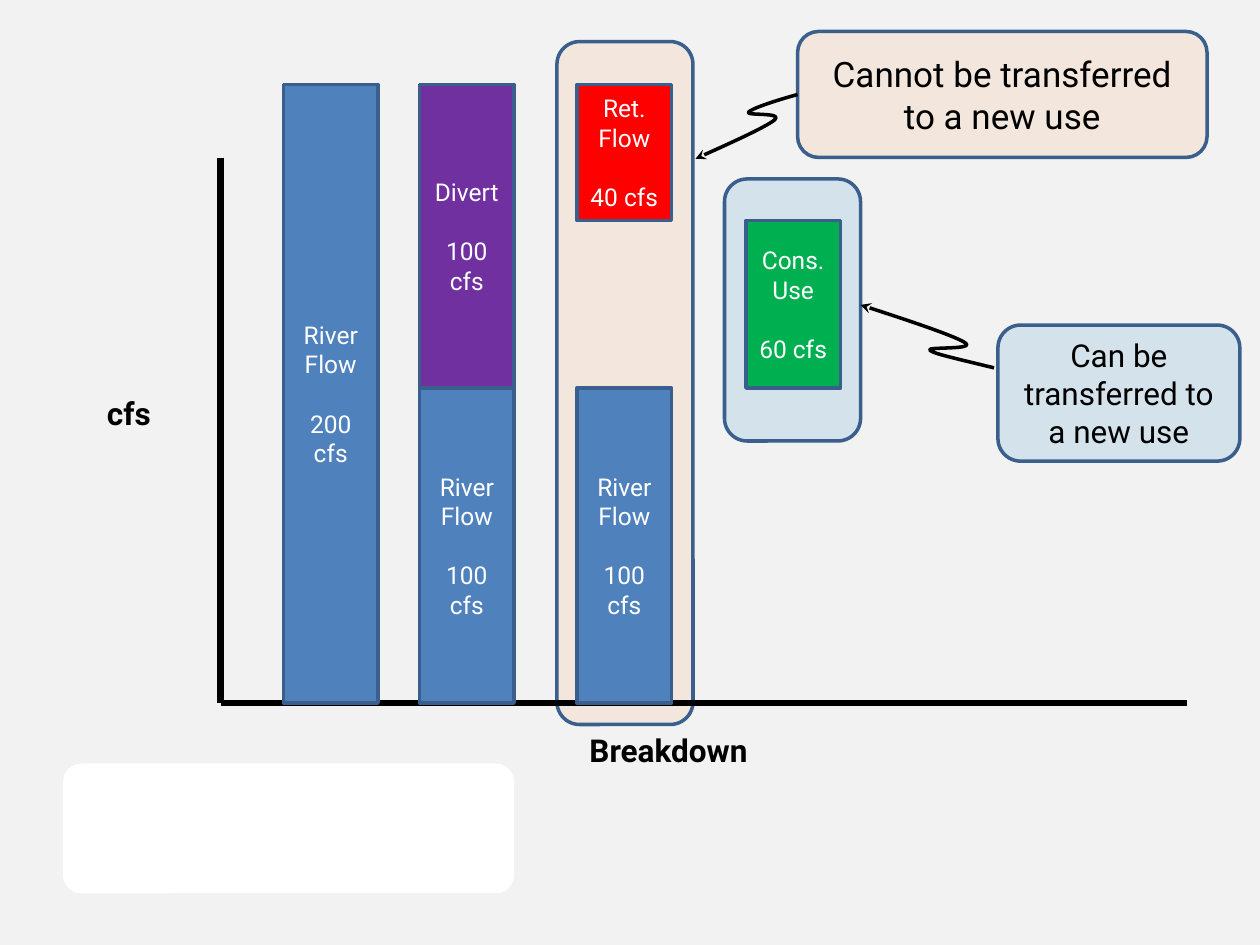
from dataclasses import dataclass

from lxml import etree
from pptx import Presentation
from pptx.dml.color import RGBColor
from pptx.enum.shapes import MSO_CONNECTOR, MSO_SHAPE
from pptx.enum.text import MSO_ANCHOR, PP_ALIGN
from pptx.oxml.ns import qn
from pptx.util import Inches, Pt

RECT = MSO_SHAPE.RECTANGLE
ROUNDED = MSO_SHAPE.ROUNDED_RECTANGLE
STRAIGHT = MSO_CONNECTOR.STRAIGHT
MIDDLE = MSO_ANCHOR.MIDDLE
TOP = MSO_ANCHOR.TOP
CENTER = PP_ALIGN.CENTER
LEFT = PP_ALIGN.LEFT


@dataclass(frozen=True)
class Theme:
    """Colours, type sizes and line widths of the slide."""
    font: str = "Roboto"
    background: str = "F2F2F2"
    panel: str = "FFFFFF"
    outline: str = "3A5F8C"
    ink: str = "000000"
    bar_text: str = "FFFFFF"
    river: str = "4F81BD"
    divert: str = "7030A0"
    consumed: str = "00B050"
    returned: str = "FF0000"
    fixed_tint: str = "F79646"
    transferable_tint: str = "0070C0"
    tint_opacity: int = 12
    bar_size: int = 14
    label_size: int = 18
    callout_size: int = 20
    line_gap: int = 17
    outline_width: float = 2
    axis_width: float = 3.5


THEME = Theme()
BASELINE, MID_LEVEL, RETURN_LEVEL, FULL_LEVEL = 5.58, 3.08, 1.75, 0.67
BAR_WIDTH = 0.75
AXIS_LEFT, AXIS_TOP, AXIS_RIGHT = 1.75, 1.25, 9.42

BARS = [
    (2.25, FULL_LEVEL, BASELINE, THEME.river, "River Flow", "200 cfs"),
    (3.33, MID_LEVEL, BASELINE, THEME.river, "River Flow", "100 cfs"),
    (3.33, FULL_LEVEL, MID_LEVEL, THEME.divert, "Divert", "100 cfs"),
    (4.58, MID_LEVEL, BASELINE, THEME.river, "River Flow", "100 cfs"),
    (5.92, RETURN_LEVEL, MID_LEVEL, THEME.consumed, "Cons.\vUse", "60 cfs"),
    (4.58, FULL_LEVEL, RETURN_LEVEL, THEME.returned, "Ret. Flow", "40 cfs"),
]
FIXED_ARROW = [
    (6.33, 0.75), (6.15, 0.8), (5.97, 0.86), (5.94, 0.89), (5.91, 0.92),
    (6.22, 0.89), (6.15, 0.95), (6.08, 1.01), (5.52, 1.26), (5.52, 1.26),
]
TRANSFER_ARROW = [
    (7.89, 2.92), (7.65, 2.86), (7.41, 2.81), (7.38, 2.78), (7.34, 2.75),
    (7.75, 2.78), (7.66, 2.72), (7.57, 2.66), (6.83, 2.42), (6.83, 2.42),
]


def rgb(value):
    """Turn a hex string into a colour."""
    return RGBColor.from_string(value)


def write(frame, *lines, size, color=THEME.ink, bold=False, align=CENTER,
          anchor=MIDDLE, gap=0):
    """Fill a text frame with one paragraph per line."""
    frame.word_wrap = True
    frame.vertical_anchor = anchor
    for index, line in enumerate(lines):
        paragraph = frame.add_paragraph() if index else frame.paragraphs[0]
        paragraph.text = line
        paragraph.alignment = align
        if index:
            paragraph.space_before = Pt(gap)
        font = paragraph.font
        font.name, font.size, font.bold = THEME.font, Pt(size), bold
        font.color.rgb = rgb(color)


def add_box(slide, kind, box, fill, opacity=100, outlined=True):
    """Add a filled box, optionally translucent or without outline."""
    shape = slide.shapes.add_shape(kind, *map(Inches, box))
    shape.shadow.inherit = False
    shape.fill.solid()
    shape.fill.fore_color.rgb = rgb(fill)
    if opacity < 100:
        color = shape.fill._xPr.find(qn("a:solidFill"))[0]
        etree.SubElement(color, qn("a:alpha"), val=str(opacity * 1000))
    if outlined:
        shape.line.color.rgb = rgb(THEME.outline)
        shape.line.width = Pt(THEME.outline_width)
    else:
        shape.line.fill.background()
    return shape


def add_tinted(slide, box, tint):
    """Add a translucent rounded box."""
    return add_box(slide, ROUNDED, box, tint, THEME.tint_opacity)


def add_bar(slide, left, top, bottom, fill, name, amount):
    """Add one bar segment with its name and amount."""
    bar = add_box(slide, RECT, (left, top, BAR_WIDTH, bottom - top), fill)
    write(bar.text_frame, name, amount, size=THEME.bar_size,
          color=THEME.bar_text, gap=THEME.line_gap)


def add_axis(slide, start, end):
    """Add a thick straight axis line."""
    axis = slide.shapes.add_connector(STRAIGHT, *map(Inches, start + end))
    axis.line.color.rgb = rgb(THEME.ink)
    axis.line.width = Pt(THEME.axis_width)
    etree.SubElement(axis._element.spPr, qn("a:effectLst"))


def add_label(slide, box, text):
    """Add a bold axis label."""
    label = slide.shapes.add_textbox(*map(Inches, box))
    write(label.text_frame, text, size=THEME.label_size, bold=True,
          align=LEFT, anchor=TOP)


def add_curved_arrow(slide, points):
    """Add an arrow along cubic curves through a start and control triples."""
    start, *controls = [(Inches(x), Inches(y)) for x, y in points]
    builder = slide.shapes.build_freeform(*start)
    builder.add_line_segments(controls, close=False)
    arrow = builder.convert_to_shape()
    arrow.shadow.inherit = False
    arrow.fill.background()
    arrow.line.color.rgb = rgb(THEME.ink)
    arrow.line.width = Pt(THEME.outline_width)
    outline = arrow.line._get_or_add_ln()
    etree.SubElement(outline, qn("a:tailEnd"), type="stealth")
    path = next(arrow._element.iter(qn("a:path")))
    segments = path.findall(qn("a:lnTo"))
    for first in range(0, len(segments), 3):
        curve = etree.SubElement(path, qn("a:cubicBezTo"))
        for segment in segments[first:first + 3]:
            curve.append(segment[0])
            path.remove(segment)


def add_callout(slide, box, tint, text, size, arrow):
    """Add a tinted callout and its curved arrow."""
    callout = add_tinted(slide, box, tint)
    write(callout.text_frame, text, size=size)
    add_curved_arrow(slide, arrow)


def main():
    """Build and save the slide."""
    deck = Presentation()
    deck.slide_width, deck.slide_height = Inches(10), Inches(7.5)
    slide = deck.slides.add_slide(deck.slide_layouts[6])
    slide.background.fill.solid()
    slide.background.fill.fore_color.rgb = rgb(THEME.background)

    panel = add_box(slide, ROUNDED, (0.5, 6.06, 3.58, 1.03), THEME.panel,
                    outlined=False)
    panel.adjustments[0] = 0.14
    add_tinted(slide, (5.75, 1.42, 1.08, 2.08), THEME.transferable_tint)
    add_tinted(slide, (4.42, 0.33, 1.08, 5.42), THEME.fixed_tint)

    origin = (AXIS_LEFT, BASELINE)
    add_axis(slide, (AXIS_LEFT, AXIS_TOP), origin)
    add_axis(slide, (AXIS_RIGHT, BASELINE), origin)
    add_label(slide, (0.75, 3.08, 0.75, 0.4), "cfs")
    add_label(slide, (4.58, 5.75, 2.5, 0.4), "Breakdown")
    for bar in BARS:
        add_bar(slide, *bar)

    add_callout(slide, (6.33, 0.25, 3.25, 1), THEME.fixed_tint,
                "Cannot be transferred to a new use", THEME.callout_size,
                FIXED_ARROW)
    add_callout(slide, (7.92, 2.58, 1.92, 1.08), THEME.transferable_tint,
                "Can be transferred to a new use", THEME.label_size,
                TRANSFER_ARROW)
    deck.save("out.pptx")


if __name__ == "__main__":
    main()
